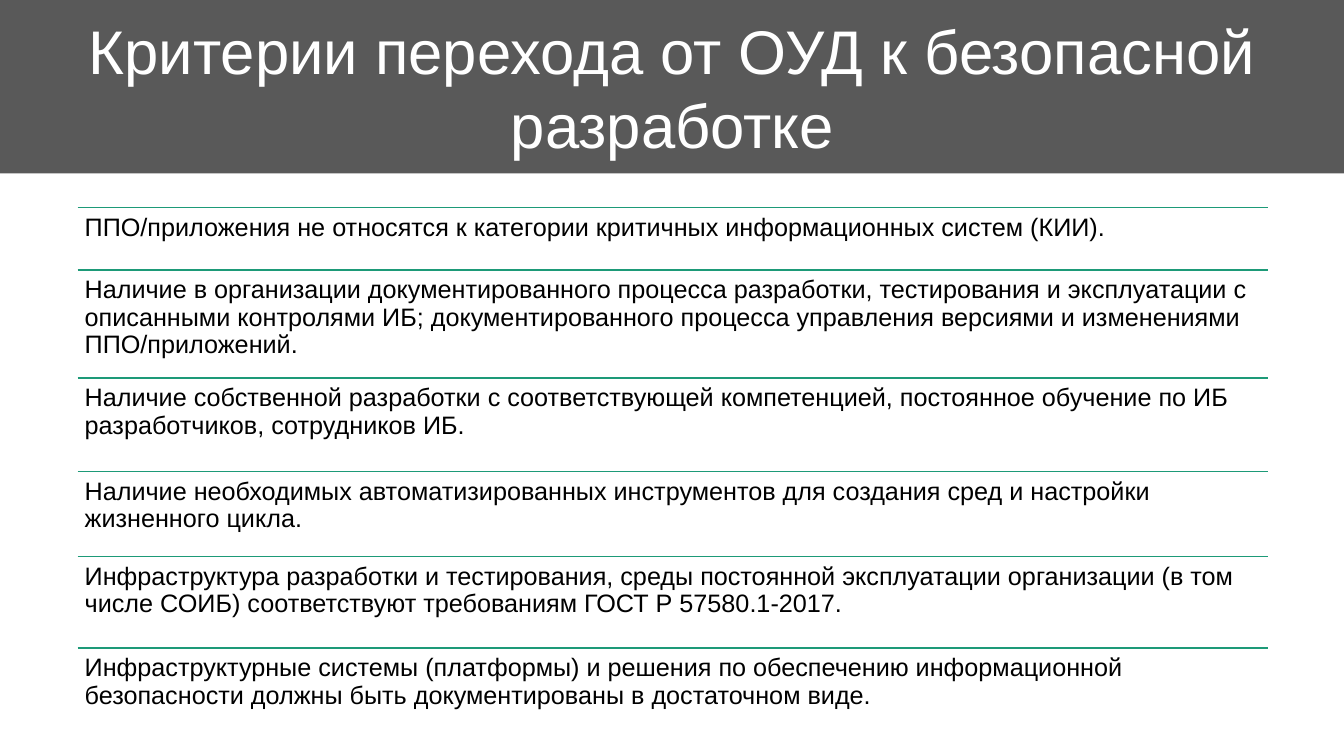
from lxml import etree
from pptx import Presentation
from pptx.dml.color import RGBColor
from pptx.enum.shapes import MSO_CONNECTOR, MSO_SHAPE
from pptx.enum.text import MSO_ANCHOR, PP_ALIGN
from pptx.oxml.ns import qn
from pptx.util import Inches, Pt

WHITE = RGBColor(0xFF, 0xFF, 0xFF)
BLACK = RGBColor(0x00, 0x00, 0x00)
GRAY = RGBColor(0x59, 0x59, 0x59)
GREEN = RGBColor(0x1D, 0x9A, 0x78)

LEFT, RIGHT = 0.77, 12.58
TEXT_WIDTH = 11.79
INSET = 0.07

# Top edge and wording of each criterion
CRITERIA = [
    (2.06, "ППО/приложения не относятся к категории критичных информационных систем (КИИ)."),
    (2.68, "Наличие в организации документированного процесса разработки, тестирования и "
           "эксплуатации с описанными контролями ИБ; документированного процесса управления "
           "версиями и изменениями ППО/приложений."),
    (3.75, "Наличие собственной разработки с соответствующей компетенцией, постоянное "
           "обучение по ИБ разработчиков, сотрудников ИБ."),
    (4.68, "Наличие необходимых автоматизированных инструментов для создания сред и "
           "настройки жизненного цикла."),
    (5.52, "Инфраструктура разработки и тестирования, среды постоянной эксплуатации "
           "организации (в том числе СОИБ) соответствуют требованиям ГОСТ Р 57580.1-2017."),
    (6.43, "Инфраструктурные системы (платформы) и решения по обеспечению информационной "
           "безопасности должны быть документированы в достаточном виде."),
]
BOTTOM = 7.5


def add_text(slide, box, text, size, color, frame_format, paragraph_format):
    shape = slide.shapes.add_textbox(*map(Inches, box))
    frame = shape.text_frame
    frame.word_wrap = True
    for name, value in frame_format.items():
        setattr(frame, name, value)
    paragraph = frame.paragraphs[0]
    for name, value in paragraph_format.items():
        setattr(paragraph, name, value)
    run = paragraph.add_run()
    run.text = text
    run.font.name = "Arial"
    run.font.size = Pt(size)
    run.font.color.rgb = color


presentation = Presentation()
presentation.slide_width = Inches(13.33)
presentation.slide_height = Inches(7.5)
slide = presentation.slides.add_slide(presentation.slide_layouts[6])

# Title band
band = slide.shapes.add_shape(MSO_SHAPE.RECTANGLE, 0, 0, Inches(13.33), Inches(1.72))
band.shadow.inherit = False
band.fill.solid()
band.fill.fore_color.rgb = GRAY
band.line.fill.background()
add_text(slide, (0.76, 0.43, 11.82, 0.87),
         "Критерии перехода от ОУД к безопасной разработке", 44, WHITE,
         {"vertical_anchor": MSO_ANCHOR.MIDDLE}, {"alignment": PP_ALIGN.CENTER})

# Criteria, each under a green rule and reaching down to the next one
criterion_frame = {f"margin_{side}": Inches(INSET) for side in ("left", "top", "right", "bottom")}
criterion_paragraph = {"line_spacing": 0.9, "space_after": Pt(6.3)}
bottoms = [top for top, _ in CRITERIA[1:]] + [BOTTOM]
for (top, text), bottom in zip(CRITERIA, bottoms):
    rule = slide.shapes.add_connector(MSO_CONNECTOR.STRAIGHT, Inches(LEFT), Inches(top),
                                      Inches(RIGHT), Inches(top))
    rule.line.color.rgb = GREEN
    rule.line.width = Pt(1)
    etree.SubElement(rule._element.spPr, qn("a:effectLst"))
    add_text(slide, (LEFT, top, TEXT_WIDTH, bottom - top), text, 18, BLACK,
             criterion_frame, criterion_paragraph)

presentation.save("out.pptx")
